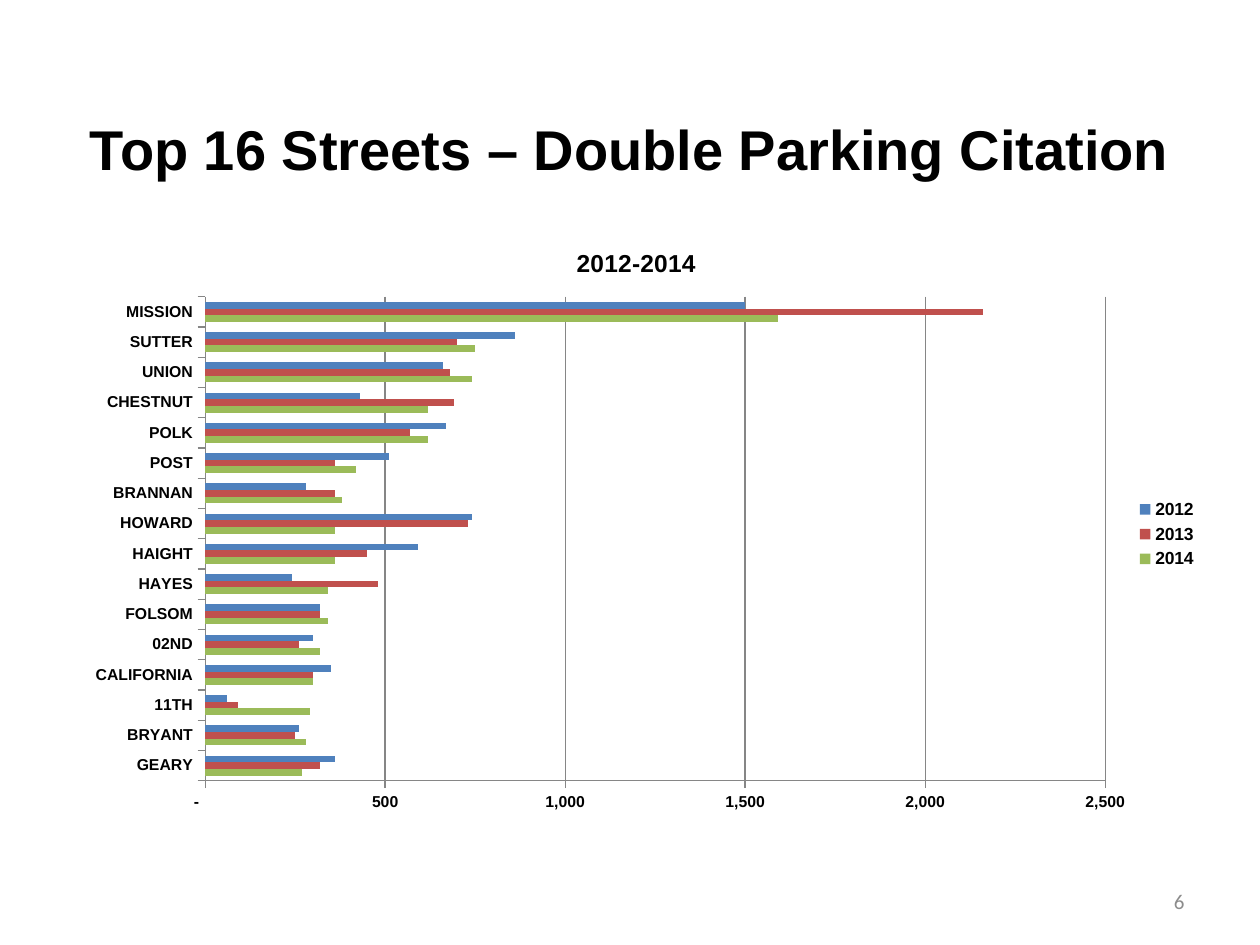
"""Build the double parking citation slide with its clustered bar chart."""
from lxml.etree import SubElement
from pptx import Presentation
from pptx.chart.data import CategoryChartData as ChartData
from pptx.dml.color import RGBColor
from pptx.enum.chart import XL_CHART_TYPE as ChartType
from pptx.enum.chart import XL_LEGEND_POSITION as LegendPosition
from pptx.enum.chart import XL_TICK_MARK as TickMark
from pptx.enum.text import MSO_ANCHOR as Anchor
from pptx.enum.text import PP_ALIGN as Align
from pptx.oxml.ns import qn
from pptx.util import Inches, Pt

STREETS = ["GEARY", "BRYANT", "11TH", "CALIFORNIA", "02ND", "FOLSOM", "HAYES", "HAIGHT",
           "HOWARD", "BRANNAN", "POST", "POLK", "CHESTNUT", "UNION", "SUTTER", "MISSION"]
CITATIONS = {
    "2014": ("9BBB59", [270, 280, 290, 300, 320, 340, 340, 360,
                        360, 380, 420, 620, 620, 740, 750, 1590]),
    "2013": ("C0504D", [320, 250, 90, 300, 260, 320, 480, 450,
                        730, 360, 360, 570, 690, 680, 700, 2160]),
    "2012": ("4F81BD", [360, 260, 60, 350, 300, 320, 240, 590,
                        740, 280, 510, 670, 430, 660, 860, 1500]),
}
COUNT_FORMAT = r'_(* #,##0_);_(* \(#,##0\);_(* "-"??_);_(@_)'
PLOT_AREA = {"x": 0.124, "y": 0.117, "w": 0.785, "h": 0.781}


def color(value):
    """Turn a hex string into a colour."""
    return RGBColor.from_string(value)


class SlideBuilder:
    """Hold the style and the current slide."""

    text_color = "000000"
    number_color = "8C8C8C"
    line_color = "868686"

    def __init__(self, deck):
        self.page = deck.slides.add_slide(deck.slide_layouts[5])

    def style_font(self, font, size, name="Arial", bold=True, shade=None):
        """Apply one text format to a font."""
        for key, value in {"size": Pt(size), "name": name, "bold": bold}.items():
            setattr(font, key, value)
        font.color.rgb = color(shade or self.text_color)

    def fill_text(self, box, text, align, **style):
        """Put one formatted line of text in a box."""
        frame = box.text_frame
        for key, value in {"word_wrap": True, "vertical_anchor": Anchor.MIDDLE}.items():
            setattr(frame, key, value)
        para = frame.paragraphs[0]
        para.alignment = align
        span = para.add_run()
        span.text = text
        self.style_font(span.font, **style)

    def add_title(self, text, left, top, width, height):
        """Place and fill the title placeholder."""
        box = self.page.shapes.title
        for key, value in {"left": left, "top": top, "width": width, "height": height}.items():
            setattr(box, key, Inches(value))
        self.fill_text(box, text, Align.CENTER, size=32)

    def add_page_number(self, text, *place):
        """Add the page number at the lower right."""
        box = self.page.shapes.add_textbox(*map(Inches, place))
        self.fill_text(box, text, Align.RIGHT, size=12, name="Calibri", bold=False,
                       shade=self.number_color)

    def add_bar_chart(self, title, categories, series, *place):
        """Add a clustered bar chart with a title and a legend."""
        data = ChartData(number_format=COUNT_FORMAT)
        data.categories = categories
        for name, (_, values) in series.items():
            data.add_series(name, values)
        frame = self.page.shapes.add_chart(ChartType.BAR_CLUSTERED, *map(Inches, place), data)
        chart = frame.chart
        self.style_font(chart.font, 10, name="Calibri", bold=False)

        chart.has_title = True
        para = chart.chart_title.text_frame.paragraphs[0]
        span = para.add_run()
        span.text = title
        self.style_font(span.font, 14)

        plot = chart.plots[0]
        for key, value in {"gap_width": 150, "overlap": 0, "vary_by_categories": False}.items():
            setattr(plot, key, value)
        for bars, (shade, _) in zip(plot.series, series.values()):
            bars.format.fill.solid()
            bars.format.fill.fore_color.rgb = color(shade)

        for axis in (chart.category_axis, chart.value_axis):
            axis.major_tick_mark = TickMark.OUTSIDE
            self.style_font(axis.tick_labels.font, 9)
            self.style_line(axis.format.line)
        counts = chart.value_axis
        for key, value in {"minimum_scale": 0, "maximum_scale": 2500, "major_unit": 500,
                           "has_major_gridlines": True}.items():
            setattr(counts, key, value)
        self.style_line(counts.major_gridlines.format.line)
        counts.tick_labels.number_format = COUNT_FORMAT
        counts.tick_labels.number_format_is_linked = False

        chart.has_legend = True
        for key, value in {"position": LegendPosition.RIGHT, "include_in_layout": False}.items():
            setattr(chart.legend, key, value)
        self.style_font(chart.legend.font, 10)
        self.set_plot_area(chart)

    def style_line(self, line):
        """Apply the axis and grid line format."""
        line.width = Pt(0.75)
        line.color.rgb = color(self.line_color)

    def set_plot_area(self, chart):
        """Fix the inner plot area as shares of the chart."""
        area = chart.element.find(".//" + qn("c:plotArea"))
        layout = area.find(qn("c:layout"))
        if layout is None:
            layout = SubElement(area, qn("c:layout"))
            area.insert(0, layout)
        manual = SubElement(layout, qn("c:manualLayout"))
        settings = {"layoutTarget": "inner", "xMode": "edge", "yMode": "edge", **PLOT_AREA}
        for tag, value in settings.items():
            SubElement(manual, qn(f"c:{tag}"), val=str(value))


def main():
    """Build and save the deck."""
    deck = Presentation()
    deck.slide_width, deck.slide_height = Inches(10), Inches(7.5)
    builder = SlideBuilder(deck)
    builder.add_title("Top 16 Streets – Double Parking Citation", 0.5, 0.8, 9, 0.75)
    builder.add_page_number("6", 7.17, 6.95, 2.33, 0.4)
    builder.add_bar_chart("2012-2014", STREETS, CITATIONS, 0.5, 1.78, 9.1, 4.92)
    deck.save("out.pptx")


if __name__ == "__main__":
    main()
